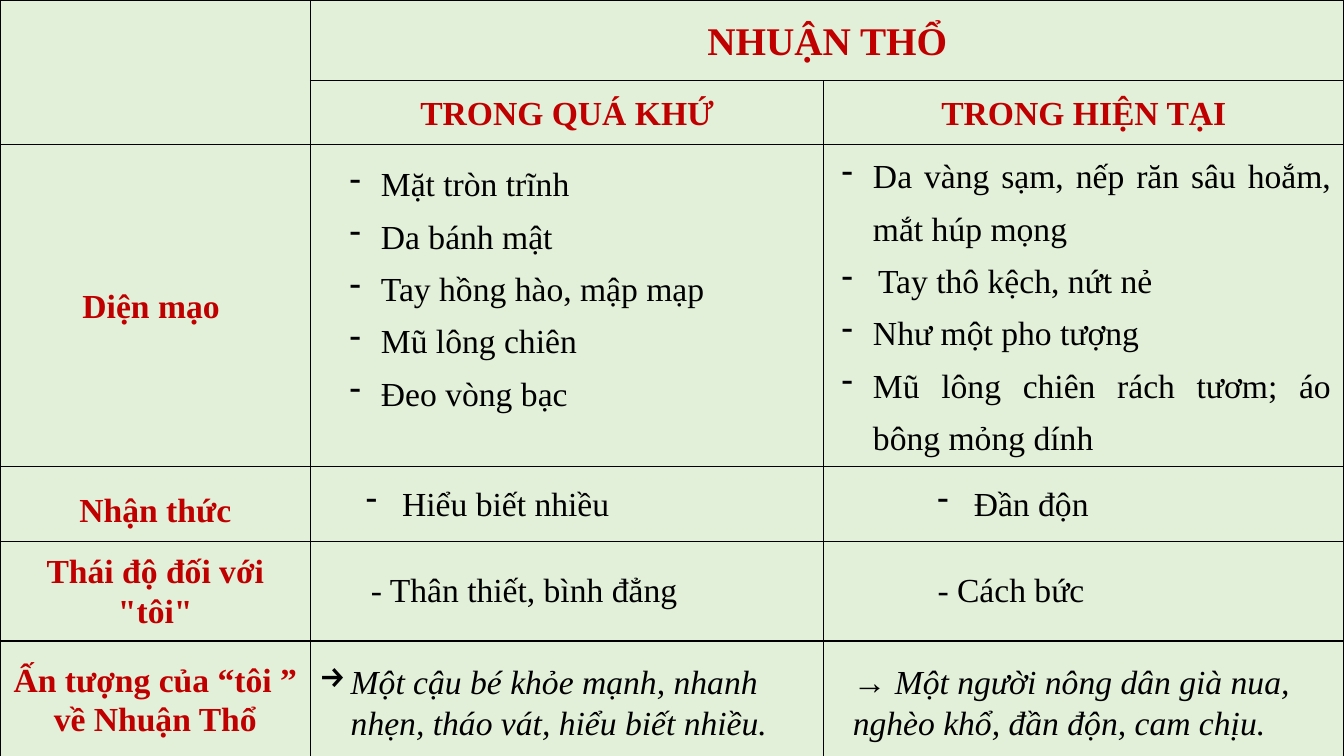
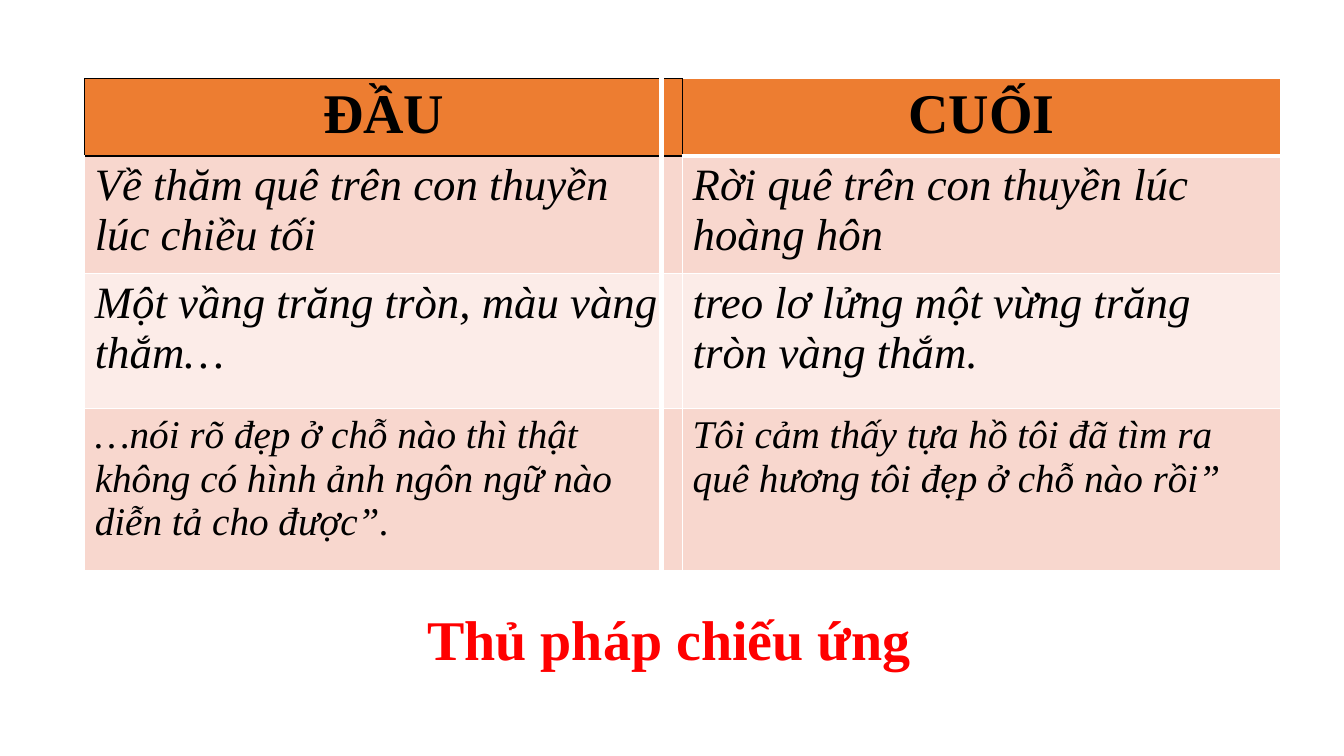
from dataclasses import dataclass
from lxml.etree import SubElement
from pptx import Presentation
from pptx.dml.color import RGBColor
from pptx.enum.shapes import MSO_CONNECTOR
from pptx.enum.text import MSO_ANCHOR, MSO_AUTO_SIZE, PP_ALIGN
from pptx.oxml import parse_xml
from pptx.oxml.ns import nsdecls, qn
from pptx.util import Inches, Pt


@dataclass(frozen=True)
class Theme:
    font: str = "Times New Roman"
    black: str = "000000"
    white: str = "FFFFFF"
    heading: str = "C00000"
    accent: str = "FF0000"
    green: str = "E2F0D9"
    orange: str = "ED7D31"
    peach: str = "F8D7CE"
    pale: str = "FCECE8"
    body: int = 24
    quote: int = 28
    large_quote: int = 32
    title: int = 40


THEME = Theme()

CHARACTER = "NHUẬN THỔ"
PERIODS = ["TRONG QUÁ KHỨ", "TRONG HIỆN TẠI"]
ASPECTS = [
    "Diện mạo ",
    "Nhận thức",
    'Thái độ đối với "tôi"',
    "Ấn tượng của “tôi ” về Nhuận Thổ",
]
PORTRAIT_COLUMNS = [3.08, 5.09, 5.16]
PORTRAIT_ROWS = [0.8, 0.63, 3.2, 0.74, 0.99, 1.16]

HANG = 0.31
WIDE_HANG = 0.36
PAST_LOOKS = [
    ("-", HANG, "Mặt tròn trĩnh"),
    ("-", HANG, "Da bánh mật"),
    ("-", HANG, "Tay hồng hào, mập mạp"),
    ("-", HANG, "Mũ lông chiên"),
    ("-", HANG, "Đeo vòng bạc"),
]
PRESENT_LOOKS = [
    ("-", HANG, "Da vàng sạm, nếp răn sâu hoắm, mắt húp mọng"),
    ("-", WIDE_HANG, "Tay thô kệch, nứt nẻ"),
    ("-", HANG, "Như một pho tượng"),
    ("-", HANG, "Mũ lông chiên rách tươm; áo bông mỏng dính"),
]
LOOKS = {"spacing": 1.3}
JUSTIFIED_LOOKS = {"spacing": 1.3, "align": PP_ALIGN.JUSTIFY}
IMPRESSION = {"italic": True}
DETAILS = [
    ((3.37, 1.45, 4.37, 2.73), PAST_LOOKS, LOOKS),
    ((8.25, 1.37, 5.05, 3.25), PRESENT_LOOKS, JUSTIFIED_LOOKS),
    ((3.53, 4.74, 3, 0.5), [("-", WIDE_HANG, "Hiểu biết nhiều")], {}),
    ((9.2, 4.74, 3.33, 0.5), [("-", WIDE_HANG, "Đần độn")], {}),
    ((3.58, 5.59, 4.26, 0.5), [("", 0, "- Thân thiết, bình đẳng")], {}),
    ((9.2, 5.59, 2.32, 0.5), [("", 0, "- Cách bức")], {}),
    ((3.07, 6.51, 5.19, 0.91),
     [("→", HANG, "Một cậu bé khỏe mạnh, nhanh nhẹn, tháo vát, hiểu biết nhiều.")],
     IMPRESSION),
    ((8.36, 6.51, 4.94, 0.91),
     [("", 0, "→ Một người nông dân già nua, nghèo khổ, đần độn, cam chịu.")],
     IMPRESSION),
]

ENDS = ["ĐẦU", "CUỐI"]
ECHOES = [
    (1.12, THEME.peach, THEME.large_quote,
     ["Về thăm quê trên con thuyền lúc chiều tối",
      "Rời quê trên con thuyền lúc hoàng hôn"]),
    (1.34, THEME.pale, THEME.large_quote,
     ["Một vầng trăng tròn, màu vàng thắm…",
      "treo lơ lửng một vừng trăng tròn vàng thắm."]),
    (1.61, THEME.peach, THEME.quote,
     ["…nói rõ đẹp ở chỗ nào thì thật không có hình ảnh ngôn ngữ nào diễn tả cho được”.",
      "Tôi cảm thấy tựa hồ tôi đã tìm ra quê hương tôi đẹp ở chỗ nào rồi”"]),
]
ECHO_HEADER_HEIGHT = 0.74
ECHO_COLUMNS = [5.93, 5.93]
DEVICE = "Thủ pháp chiếu ứng"
RULES = [((1.27, 6.54), (11.85, 6.51)), ((6.56, 0.21), (6.56, 6.53))]


def style(paragraph, size, color=THEME.black, bold=False, italic=False,
          align=None, spacing=None):
    font = paragraph.font
    font.name, font.size = THEME.font, Pt(size)
    font.bold, font.italic = bold, italic
    font.color.rgb = RGBColor.from_string(color)
    paragraph.alignment = align
    paragraph.line_spacing = spacing


def set_bullet(paragraph, mark, hang):
    properties = paragraph._p.get_or_add_pPr()
    properties.set("marL", str(Inches(hang)))
    properties.set("indent", str(-Inches(hang)))
    bullet = parse_xml(f'<a:buChar {nsdecls("a")} char="{mark}"/>')
    properties.insert_element_before(bullet, "a:tabLst", "a:defRPr", "a:extLst")


def set_borders(cell, left, right, top, bottom):
    properties = cell._tc.get_or_add_tcPr()
    sides = zip("LRTB", (left, right, top, bottom))
    for position, (side, (color, width)) in enumerate(sides):
        properties.insert(position, parse_xml(
            f'<a:ln{side} {nsdecls("a")} w="{Pt(width)}"><a:solidFill>'
            f'<a:srgbClr val="{color}"/></a:solidFill></a:ln{side}>'))


def add_grid(slide, left, top, columns, rows):
    table = slide.shapes.add_table(
        len(rows), len(columns), Inches(left), Inches(top),
        Inches(sum(columns)), Inches(sum(rows))).table
    table.first_row = table.horz_banding = False
    for column, width in zip(table.columns, columns):
        column.width = Inches(width)
    for row, height in zip(table.rows, rows):
        row.height = Inches(height)
    return table


def paint(cell, fill, borders):
    cell.fill.solid()
    cell.fill.fore_color.rgb = RGBColor.from_string(fill)
    set_borders(cell, *borders)


def write(cell, text, size, **look):
    cell.text = text
    style(cell.text_frame.paragraphs[0], size, **look)


def add_text(slide, box, lines, size, wrap=True, **look):
    frame = slide.shapes.add_textbox(*map(Inches, box)).text_frame
    frame.word_wrap = wrap
    frame.auto_size = MSO_AUTO_SIZE.SHAPE_TO_FIT_TEXT
    for position, (mark, hang, text) in enumerate(lines):
        paragraph = frame.add_paragraph() if position else frame.paragraphs[0]
        paragraph.text = text
        style(paragraph, size, **look)
        if mark:
            set_bullet(paragraph, mark, hang)


def add_rule(slide, start, end):
    rule = slide.shapes.add_connector(
        MSO_CONNECTOR.STRAIGHT, *map(Inches, start + end))
    rule.line.color.rgb = RGBColor.from_string(THEME.white)
    rule.line.width = Pt(3)
    SubElement(rule._element.spPr, qn("a:effectLst"))


def build_portrait(slide):
    table = add_grid(slide, 0, 0, PORTRAIT_COLUMNS, PORTRAIT_ROWS)
    for cell in table.iter_cells():
        paint(cell, THEME.green, [(THEME.black, 1)] * 4)
        cell.vertical_anchor = MSO_ANCHOR.MIDDLE
        cell.margin_left = cell.margin_right = Inches(0.07)
        cell.margin_top = cell.margin_bottom = 0
    table.cell(0, 0).merge(table.cell(1, 0))
    table.cell(0, 1).merge(table.cell(0, 2))

    headings = [(0, 1, CHARACTER, THEME.quote)]
    headings += [(1, column, period, THEME.body)
                 for column, period in enumerate(PERIODS, 1)]
    headings += [(row, 0, aspect, THEME.body)
                 for row, aspect in enumerate(ASPECTS, 2)]
    for row, column, text, size in headings:
        write(table.cell(row, column), text, size, color=THEME.heading,
              bold=True, align=PP_ALIGN.CENTER, spacing=1.07)
    table.cell(3, 0).margin_top = Inches(0.12)

    for box, lines, look in DETAILS:
        add_text(slide, box, lines, THEME.body, **look)


def build_echoes(slide):
    heights = [ECHO_HEADER_HEIGHT] + [height for height, *_ in ECHOES]
    table = add_grid(slide, 0.84, 0.78, ECHO_COLUMNS, heights)
    black, white, thick = (THEME.black, 1), (THEME.white, 1), (THEME.white, 3)
    header_borders = [[black] * 4, [black, white, white, thick]]
    first_row_tops = [black, thick]

    for column, (end, borders) in enumerate(zip(ENDS, header_borders)):
        cell = table.cell(0, column)
        paint(cell, THEME.orange, borders)
        write(cell, end, THEME.title, bold=True, align=PP_ALIGN.CENTER)
    for row, (_, fill, size, passages) in enumerate(ECHOES, 1):
        for column, passage in enumerate(passages):
            cell = table.cell(row, column)
            top = first_row_tops[column] if row == 1 else white
            paint(cell, fill, [white, white, top, white])
            write(cell, passage, size, italic=True)

    for start, end in RULES:
        add_rule(slide, start, end)
    add_text(slide, (4.14, 5.95, 5.04, 0.77), [("", 0, DEVICE)], THEME.title,
             wrap=False, color=THEME.accent, bold=True)


def main():
    deck = Presentation()
    deck.slide_width, deck.slide_height = Inches(13.33), Inches(7.5)
    for build in (build_portrait, build_echoes):
        build(deck.slides.add_slide(deck.slide_layouts[6]))
    deck.save("out.pptx")


if __name__ == "__main__":
    main()
